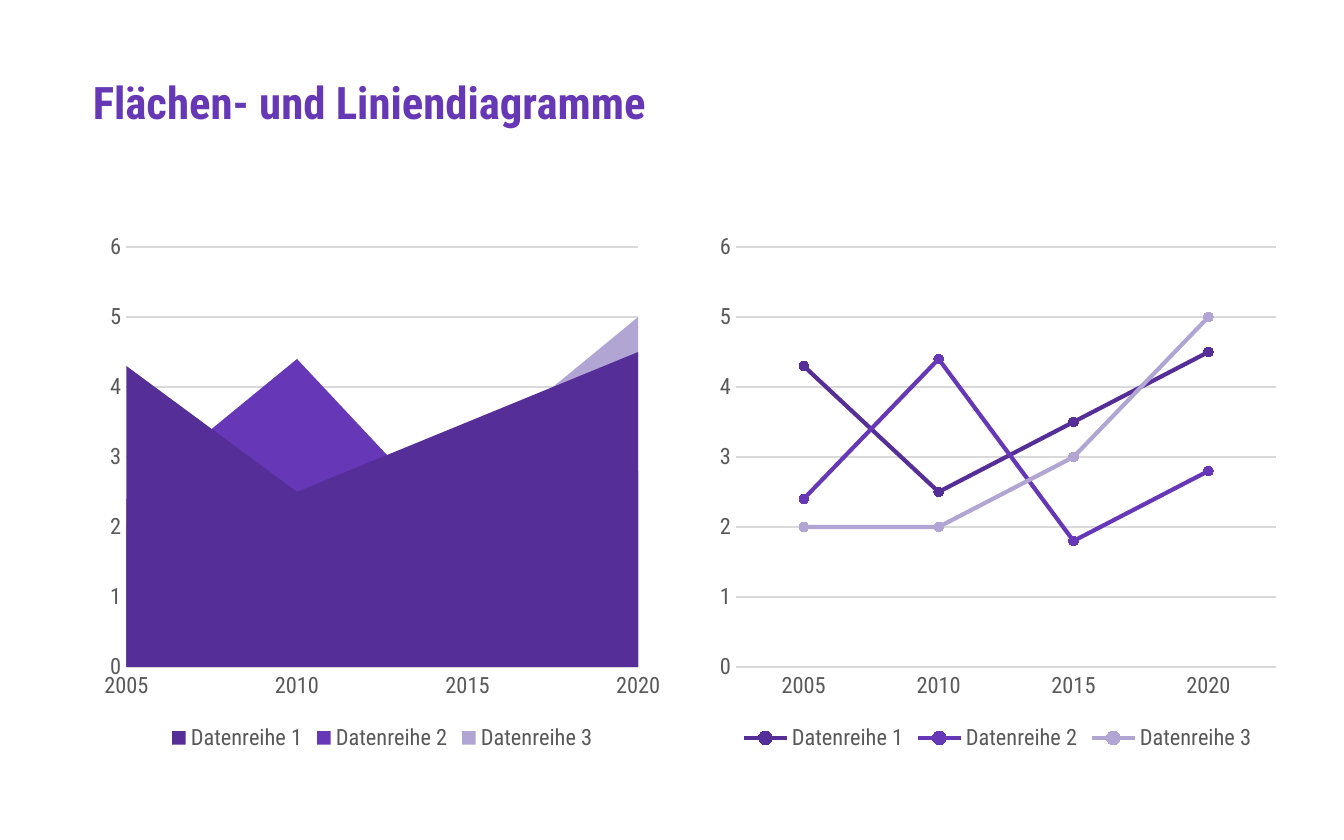
import pptx
import pptx.chart.data
import pptx.dml.color
import pptx.enum.chart
import pptx.enum.text
import pptx.util
from pptx.util import Inches

FONT = "Roboto Condensed"
GREY = "595959"
GRID = "D9D9D9"
CATEGORIES = ["2005", "2010", "2015", "2020"]
SERIES = [
    ("Datenreihe 1", (4.3, 2.5, 3.5, 4.5), "552E97"),
    ("Datenreihe 2", (2.4, 4.4, 1.8, 2.8), "6637B6"),
    ("Datenreihe 3", (2, 2, 3, 5), "B0A5D3"),
]


def rgb(color):
    return pptx.dml.color.RGBColor.from_string(color)


def set_values(target, values):
    for name, value in values.items():
        setattr(target, name, value)


def format_font(font, size, color, bold=False):
    set_values(font, {"name": FONT, "size": pptx.util.Pt(size), "bold": bold})
    font.color.rgb = rgb(color)


def format_line(line, color, width):
    line.color.rgb = rgb(color)
    line.width = pptx.util.Pt(width)


def fill_solid(fill, color):
    fill.solid()
    fill.fore_color.rgb = rgb(color)


def add_title(slide, text):
    title = slide.shapes.title
    set_values(title, {
        "left": Inches(0.69), "top": Inches(0.62),
        "width": Inches(8.62), "height": Inches(0.32),
    })
    frame = title.text_frame
    set_values(frame, {
        "text": text, "word_wrap": True,
        "auto_size": pptx.enum.text.MSO_AUTO_SIZE.NONE,
        "vertical_anchor": pptx.enum.text.MSO_ANCHOR.MIDDLE,
        "margin_left": 0, "margin_top": 0, "margin_right": 0, "margin_bottom": 0,
    })
    paragraph = frame.paragraphs[0]
    set_values(paragraph, {"alignment": pptx.enum.text.PP_ALIGN.LEFT, "line_spacing": 0.9})
    format_font(paragraph.runs[0].font, 24, "6638B6", True)


def format_axes(chart):
    for axis in (chart.category_axis, chart.value_axis):
        set_values(axis, {
            "major_tick_mark": pptx.enum.chart.XL_TICK_MARK.NONE,
            "minor_tick_mark": pptx.enum.chart.XL_TICK_MARK.NONE,
        })
        format_font(axis.tick_labels.font, 12, GREY)
    format_line(chart.category_axis.format.line, GRID, 0.75)
    set_values(chart.value_axis, {
        "minimum_scale": 0, "maximum_scale": 6, "major_unit": 1,
        "has_major_gridlines": True,
    })
    chart.value_axis.format.line.fill.background()
    format_line(chart.value_axis.major_gridlines.format.line, GRID, 0.75)


def format_legend(chart):
    chart.has_legend = True
    set_values(chart.legend, {
        "position": pptx.enum.chart.XL_LEGEND_POSITION.BOTTOM,
        "include_in_layout": False,
    })
    format_font(chart.legend.font, 12, GREY)


def format_area_series(series, color):
    fill_solid(series.format.fill, color)
    series.format.line.fill.background()


def format_line_series(series, color):
    series.smooth = False
    format_line(series.format.line, color, 2.25)
    set_values(series.marker, {"style": pptx.enum.chart.XL_MARKER_STYLE.CIRCLE, "size": 5})
    fill_solid(series.marker.format.fill, color)
    format_line(series.marker.format.line, color, 0.75)


def add_chart(slide, chart_type, left, format_series):
    data = pptx.chart.data.CategoryChartData()
    data.categories = CATEGORIES
    for name, values, color in SERIES:
        data.add_series(name, values)
    chart = slide.shapes.add_chart(
        chart_type, Inches(left), Inches(1.66), Inches(4.31), Inches(3.97), data
    ).chart
    chart.has_title = False
    format_font(chart.font, 12, "000000")
    chart.plots[0].vary_by_categories = False
    for series, (name, values, color) in zip(chart.plots[0].series, SERIES):
        format_series(series, color)
    format_axes(chart)
    format_legend(chart)


def main():
    presentation = pptx.Presentation()
    set_values(presentation, {"slide_width": Inches(10), "slide_height": Inches(6.25)})
    slide = presentation.slides.add_slide(presentation.slide_layouts[5])
    fill_solid(slide.background.fill, "FFFFFF")
    add_title(slide, "Flächen- und Liniendiagramme")
    chart_types = pptx.enum.chart.XL_CHART_TYPE
    add_chart(slide, chart_types.AREA, 0.69, format_area_series)
    add_chart(slide, chart_types.LINE_MARKERS, 5.27, format_line_series)
    presentation.save("out.pptx")


if __name__ == "__main__":
    main()
